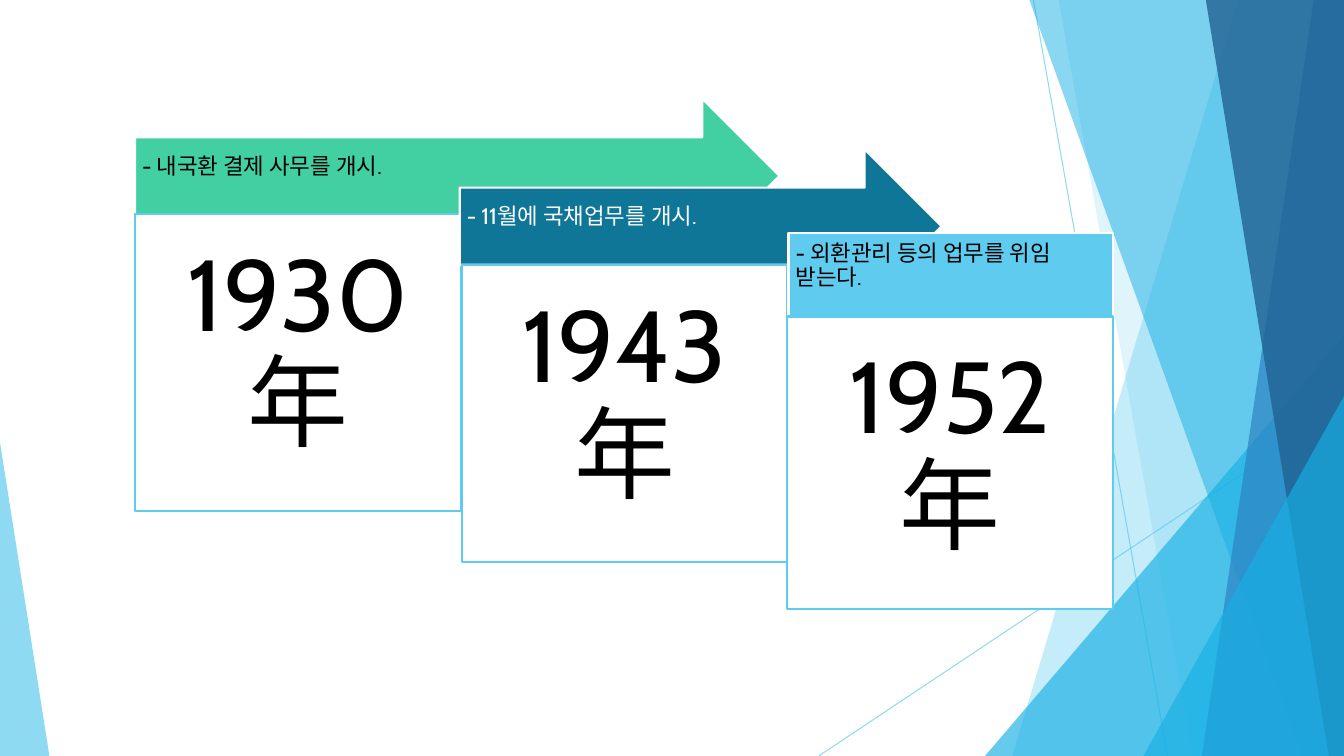
from dataclasses import dataclass

from lxml.etree import SubElement
from pptx import Presentation
from pptx.dml.color import RGBColor
from pptx.dml.fill import FillFormat
from pptx.enum.shapes import MSO_CONNECTOR, MSO_SHAPE
from pptx.enum.text import MSO_ANCHOR, PP_ALIGN
from pptx.oxml.ns import qn
from pptx.shapes.autoshape import Shape
from pptx.shapes.shapetree import SlideShapes
from pptx.util import Inches, Pt

WIDTH, HEIGHT = 13.33, 7.5
SKY, CYAN, BLUE, NAVY = "5FCBEF", "17B0E4", "2E83C3", "226292"
WHITE, BLACK = "FFFFFF", "000000"


@dataclass
class Ray:
    start: tuple[float, float]
    end: tuple[float, float]


@dataclass
class Band:
    """A full-height strip from its slanted left edge to the slide's right."""
    top: float
    base: float
    color: str
    alpha: int


@dataclass
class Peak:
    left: float
    top: float
    width: float
    tip: float
    color: str
    alpha: int


@dataclass
class Box:
    left: float
    top: float
    width: float
    height: float


@dataclass
class Step:
    kind: MSO_SHAPE
    head: Box
    color: str
    ink: str
    note: str
    card: Box
    year: str


RAYS = [Ray((10.25, 0), (11.58, HEIGHT)), Ray((WIDTH, 4.03), (8.12, HEIGHT))]
DECOR = [
    Band(12.28, 10.04, SKY, 36),
    Band(10.5, 11.83, SKY, 20),
    Peak(9.77, 3.33, 3.56, 1, CYAN, 66),
    Band(10.21, 12.91, CYAN, 50),
    Band(13.03, 11.92, BLUE, 70),
    Band(11.96, 13.18, NAVY, 80),
    Peak(11.34, 3.93, 1.99, 1, CYAN, 66),
    Peak(0, 4.39, 0.49, 0, SKY, 70),
]
STEPS = [
    Step(MSO_SHAPE.RIGHT_ARROW, Box(1.34, 0.98, 6.39, 1.53), "42D0A2", BLACK,
         "- 내국환 결제 사무를 개시.", Box(1.34, 2.12, 3.23, 2.95), "1930年"),
    Step(MSO_SHAPE.RIGHT_ARROW, Box(4.56, 1.48, 4.78, 1.53), "0F7698", WHITE,
         "- 11월에 국채업무를 개시.", Box(4.58, 2.63, 3.23, 2.95), "1943年"),
    Step(MSO_SHAPE.RECTANGLE, Box(7.82, 2.31, 3.22, 0.84), SKY, BLACK,
         "- 외환관리 등의 업무를 위임 받는다.", Box(7.81, 3.14, 3.23, 2.9), "1952年"),
]


def paint(fill: FillFormat, color: str) -> None:
    fill.solid()
    fill.fore_color.rgb = RGBColor.from_string(color)


def fade(shape: Shape, alpha: int) -> None:
    """Set the opacity, in percent, of the shape's own colour."""
    tint = next(shape._element.spPr.iter(qn("a:srgbClr")))
    SubElement(tint, qn("a:alpha"), val=str(alpha * 1000))


def draw_ray(shapes: SlideShapes, ray: Ray) -> None:
    line = shapes.add_connector(MSO_CONNECTOR.STRAIGHT,
                                *map(Inches, ray.start + ray.end))
    line.line.width = Pt(0.75)
    paint(line.line.fill, SKY)
    fade(line, 70)
    SubElement(line._element.spPr, qn("a:effectLst"))


def draw_decor(shapes: SlideShapes, item: Band | Peak) -> None:
    if isinstance(item, Band):
        form = shapes.build_freeform(Inches(item.top), 0)
        form.add_line_segments([
            (Inches(x), Inches(y)) for x, y in
            ((WIDTH, 0), (WIDTH, HEIGHT), (item.base, HEIGHT))])
        shape = form.convert_to_shape()
    else:
        shape = shapes.add_shape(
            MSO_SHAPE.ISOSCELES_TRIANGLE, Inches(item.left), Inches(item.top),
            Inches(item.width), Inches(HEIGHT - item.top))
        shape.adjustments[0] = item.tip
    paint(shape.fill, item.color)
    fade(shape, item.alpha)
    shape.line.fill.background()
    shape.shadow.inherit = False


def draw_box(shapes: SlideShapes, kind: MSO_SHAPE, box: Box, fill: str,
             edge: str) -> Shape:
    shape = shapes.add_shape(kind, Inches(box.left), Inches(box.top),
                             Inches(box.width), Inches(box.height))
    paint(shape.fill, fill)
    paint(shape.line.fill, edge)
    shape.line.width = Pt(1.5)
    shape.shadow.inherit = False
    return shape


def write(shape: Shape, text: str, size: int, ink: str, align: PP_ALIGN,
          anchor: MSO_ANCHOR, pads: tuple[float, ...]) -> None:
    """Fill the shape with text; pads run left, top, right, bottom."""
    frame = shape.text_frame
    frame.word_wrap = True
    frame.vertical_anchor = anchor
    (frame.margin_left, frame.margin_top,
     frame.margin_right, frame.margin_bottom) = map(Inches, pads)
    para = frame.paragraphs[0]
    para.text = text
    para.alignment = align
    para.line_spacing = 0.9
    para.font.name = "Cabin"
    para.font.size = Pt(size)
    para.font.color.rgb = RGBColor.from_string(ink)


def draw_step(shapes: SlideShapes, step: Step) -> None:
    head = draw_box(shapes, step.kind, step.head, step.color, WHITE)
    write(head, step.note, 16, step.ink, PP_ALIGN.LEFT, MSO_ANCHOR.MIDDLE,
          (0.07, 0.07, 0.28, 0.24))
    card = draw_box(shapes, MSO_SHAPE.RECTANGLE, step.card, WHITE, SKY)
    write(card, step.year, 72, BLACK, PP_ALIGN.CENTER, MSO_ANCHOR.TOP,
          (0.3, 0.3, 0.3, 0.3))


def main() -> None:
    deck = Presentation()
    deck.slide_width, deck.slide_height = Inches(WIDTH), Inches(HEIGHT)
    shapes = deck.slides.add_slide(deck.slide_layouts[6]).shapes
    for ray in RAYS:
        draw_ray(shapes, ray)
    for item in DECOR:
        draw_decor(shapes, item)
    for step in STEPS:
        draw_step(shapes, step)
    deck.save("out.pptx")


if __name__ == "__main__":
    main()
